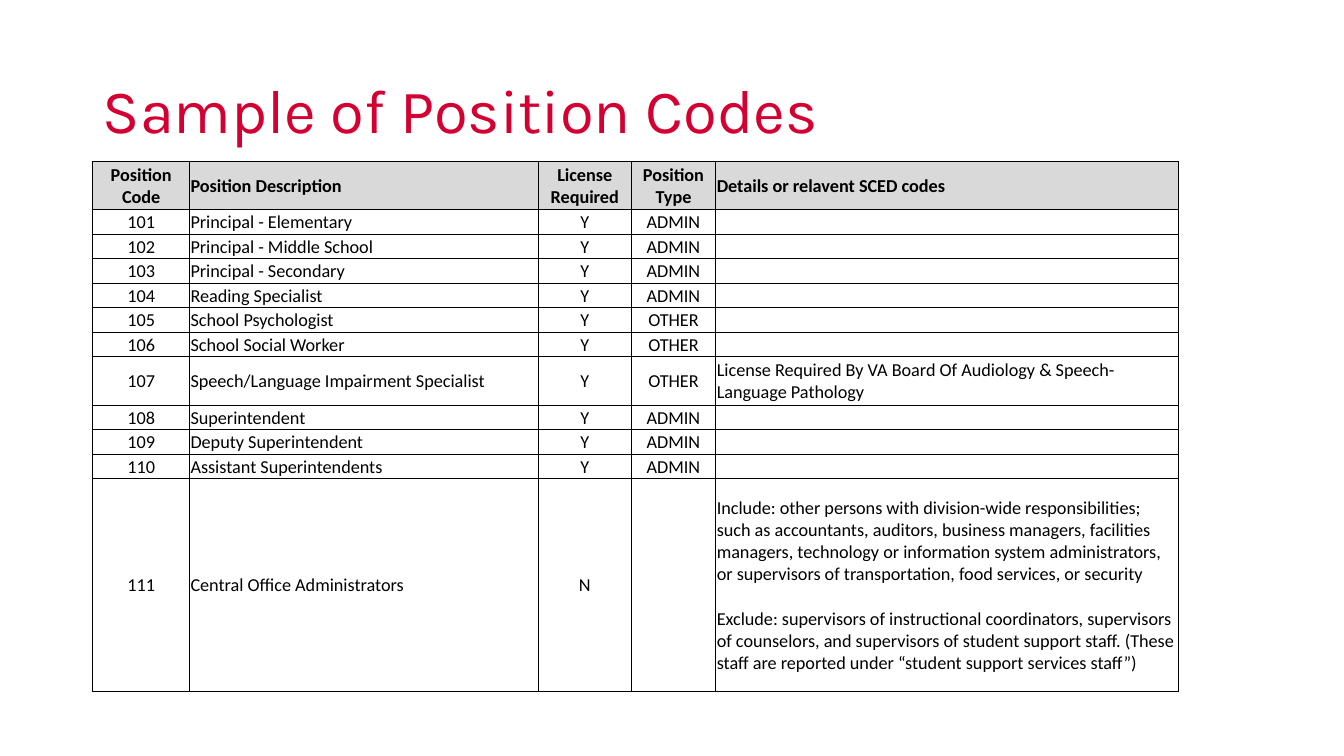
from lxml import etree
from pptx import Presentation, util as u
from pptx.dml.color import RGBColor
from pptx.enum import text
from pptx.oxml.ns import qn

COLS = [0.96, 3.46, 0.92, 0.84, 4.59]
CENTRED = (0, 2, 3)
DOUBLE_ROW, LAST_ROW = 0.48, 2.11
SIZE = 13

HEADER = ["Position Code", "Position Description", "License Required",
          "Position Type", "Details or relavent SCED codes"]
# Description, license required, position type, details
POSITIONS = [
    ("Principal - Elementary", "Y", "ADMIN", ""),
    ("Principal - Middle School", "Y", "ADMIN", ""),
    ("Principal - Secondary", "Y", "ADMIN", ""),
    ("Reading Specialist", "Y", "ADMIN", ""),
    ("School Psychologist", "Y", "OTHER", ""),
    ("School Social Worker", "Y", "OTHER", ""),
    ("Speech/Language Impairment Specialist", "Y", "OTHER",
     "License Required By VA Board Of Audiology & Speech-Language Pathology"),
    ("Superintendent", "Y", "ADMIN", ""),
    ("Deputy Superintendent", "Y", "ADMIN", ""),
    ("Assistant Superintendents", "Y", "ADMIN", ""),
    ("Central Office Administrators", "N", "",
     "Include: other persons with division-wide responsibilities; such as "
     "accountants, auditors, business managers, facilities managers, technology "
     "or information system administrators, or supervisors of transportation, "
     "food services, or security\n"
     "Exclude: supervisors of instructional coordinators, supervisors of "
     "counselors, and supervisors of student support staff. (These staff are "
     "reported under “student support services staff”)"),
]


def rgb(value):
    return RGBColor.from_string(value)


def set_all(obj, values):
    for name, value in values.items():
        setattr(obj, name, value)


def add_title(s, box, words):
    title = s.shapes.title
    set_all(title, dict(zip(("left", "top", "width", "height"), map(u.Inches, box))))
    tf = title.text_frame
    set_all(tf, {"text": words, "word_wrap": True,
                 "vertical_anchor": text.MSO_ANCHOR.MIDDLE})
    p = tf.paragraphs[0]
    set_all(p, {"alignment": text.PP_ALIGN.LEFT, "line_spacing": 0.9})
    font = p.runs[0].font
    set_all(font, {"name": "Karla", "size": u.Pt(44)})
    font.color.rgb = rgb("D50032")


def add_borders(cell, color="000000", width=0.5):
    tc_pr = cell._tc.get_or_add_tcPr()
    for i, side in enumerate("LRTB"):
        ln = etree.Element(qn(f"a:ln{side}"), w=str(u.Pt(width)))
        fill = etree.SubElement(ln, qn("a:solidFill"))
        etree.SubElement(fill, qn("a:srgbClr"), val=color)
        tc_pr.insert(i, ln)


def fill_cell(cell, words, centred, header):
    set_all(cell, {"text": words, "vertical_anchor": text.MSO_ANCHOR.MIDDLE,
                   "margin_bottom": 0})
    set_all(cell, dict.fromkeys(("margin_left", "margin_right", "margin_top"),
                                u.Inches(0.01)))
    if header:
        cell.fill.solid()
        cell.fill.fore_color.rgb = rgb("D9D9D9")
    else:
        cell.fill.background()
    add_borders(cell)
    for i, p in enumerate(cell.text_frame.paragraphs):
        p.alignment = text.PP_ALIGN.CENTER if centred else text.PP_ALIGN.LEFT
        if i:
            p.space_before = u.Pt(16)
        for r in p.runs:
            set_all(r.font, {"name": "Calibri", "size": u.Pt(SIZE), "bold": header})
            r.font.color.rgb = rgb("000000")
        if not p.runs:  # keeps an empty cell as low as its row
            etree.SubElement(p._p, qn("a:endParaRPr"), sz=str(SIZE * 100))


def add_positions(s, box):
    rows = [HEADER] + [(str(code), *row) for code, row in enumerate(POSITIONS, 101)]
    table = s.shapes.add_table(len(rows), len(COLS), *map(u.Inches, box)).table
    for column, width in zip(table.columns, COLS):
        column.width = u.Inches(width)
    tall = {0: DOUBLE_ROW, 7: DOUBLE_ROW, len(rows) - 1: LAST_ROW}
    single = (box[3] - sum(tall.values())) / (len(rows) - len(tall))
    for i, row in enumerate(rows):
        table.rows[i].height = u.Inches(tall.get(i, single))
        for j, words in enumerate(row):
            fill_cell(table.cell(i, j), words, j in CENTRED, i == 0)


def main():
    prs = Presentation()
    set_all(prs, {"slide_width": u.Inches(13.33), "slide_height": u.Inches(7.5)})
    s = prs.slides.add_slide(prs.slide_layouts[5])
    add_title(s, (0.92, 0.4, 11.5, 1.45), "Sample of Position Codes")
    add_positions(s, (0.92, 1.6, sum(COLS), 5.26))
    prs.save("out.pptx")


if __name__ == "__main__":
    main()
